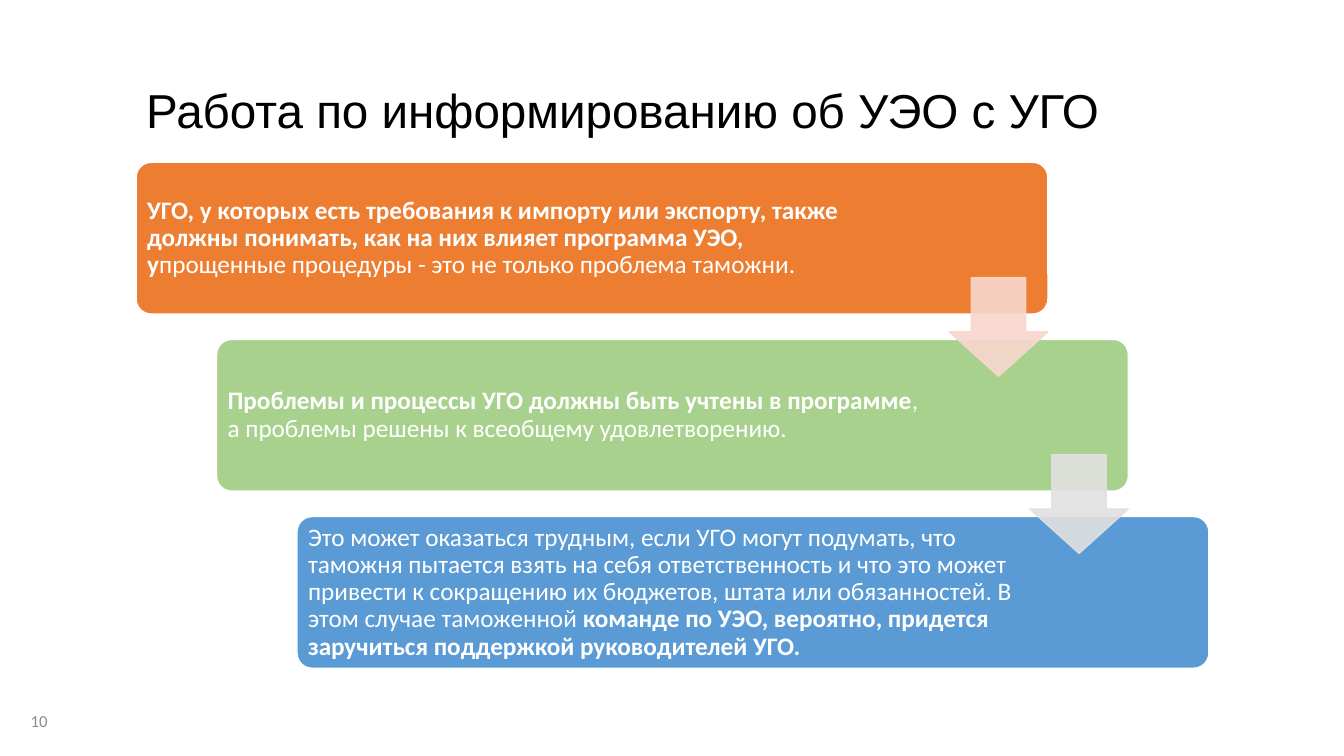
from dataclasses import dataclass

from lxml import etree
from pptx import Presentation
from pptx.dml.color import RGBColor
from pptx.enum.shapes import MSO_SHAPE
from pptx.enum.text import MSO_ANCHOR, PP_ALIGN
from pptx.oxml.ns import qn
from pptx.util import Inches, Pt

ROUND, DOWN = MSO_SHAPE.ROUNDED_RECTANGLE, MSO_SHAPE.DOWN_ARROW
MIDDLE = MSO_ANCHOR.MIDDLE
LEFT, RIGHT = PP_ALIGN.LEFT, PP_ALIGN.RIGHT


@dataclass(frozen=True)
class Theme:
    head: str = "Arial"
    body: str = "Calibri"
    ink: str = "000000"
    white: str = "FFFFFF"
    muted: str = "8C8C8C"
    cards: tuple = ("ED7D31", "A9D18E", "5B9BD5")
    arrows: tuple = ("F8D7CE", "E1E1E1")
    title: int = 34
    text: int = 18
    small: int = 12


THEME = Theme()
WIDE, HIGH = 13.33, 7.5
# Each step: its text runs, with a flag for bold
STEPS = [
    [("УГО, у которых есть требования к импорту или экспорту, также должны "
      "понимать, как на них влияет программа УЭО, у", True),
     ("прощенные процедуры - это не только проблема таможни.", False)],
    [("Проблемы и процессы УГО должны быть учтены в программе", True),
     (", а проблемы решены к всеобщему удовлетворению.", False)],
    [("Это может оказаться трудным, если УГО могут подумать, что таможня "
      "пытается взять на себя ответственность и что это может привести к "
      "сокращению их бюджетов, штата или обязанностей. В этом случае "
      "таможенной ", False),
     ("команде по УЭО, вероятно, придется заручиться поддержкой "
      "руководителей УГО.", True)],
]


def place(box):
    return [Inches(v) for v in box]


def write(frame, runs, face, size, color, align=LEFT, line=None):
    """Fill a frame with one paragraph of styled runs."""
    frame.word_wrap = True
    frame.vertical_anchor = MIDDLE
    para = frame.paragraphs[0]
    para.alignment = align
    para.line_spacing = line
    for text, bold in runs:
        run = para.add_run()
        run.text = text
        font = run.font
        font.name, font.size, font.bold = face, Pt(size), bold
        font.color.rgb = RGBColor.from_string(color)


def draw(slide, kind, box, fill, edge, adjust):
    """Add a flat shape with a thin edge."""
    shape = slide.shapes.add_shape(kind, *place(box))
    shape.shadow.inherit = False
    for i, value in enumerate(adjust):
        shape.adjustments[i] = value
    shape.fill.solid()
    shape.fill.fore_color.rgb = RGBColor.from_string(fill)
    shape.line.color.rgb = RGBColor.from_string(edge)
    shape.line.width = Pt(1)
    return shape


def add_title(slide, box):
    title = slide.shapes.title
    title.left, title.top, title.width, title.height = place(box)
    write(title.text_frame, [("Работа по информированию об УЭО с УГО", False)],
          THEME.head, THEME.title, THEME.ink, line=0.9)


def add_number(slide, box):
    note = slide.shapes.add_textbox(*place(box))
    write(note.text_frame, [("10", False)], THEME.body, THEME.small,
          THEME.muted, RIGHT)


def add_card(slide, box, fill, runs, share):
    """Draw a card whose text takes a share of its width."""
    x, y, w, h = box
    pad = 0.04
    draw(slide, ROUND, box, fill, THEME.white, [0.1])
    label = slide.shapes.add_textbox(
        *place((x + pad, y + pad, w * share, h - 2 * pad)))
    frame = label.text_frame
    frame.margin_left = frame.margin_right = Inches(0.07)
    frame.margin_top = frame.margin_bottom = Inches(0.07)
    write(frame, runs, THEME.body, THEME.text, THEME.white, line=0.9)


def add_arrow(slide, box, fill):
    arrow = draw(slide, DOWN, box, fill, fill, [0.55, 0.45])
    for color in arrow._element.spPr.iter(qn("a:srgbClr")):
        etree.SubElement(color, qn("a:alpha")).set("val", "90000")


def add_stairs(slide, box):
    """Step the cards down and right, with arrows over the gaps."""
    x, y, w, h = box
    shift, drop = w * 0.075, h * 0.35
    wide, tall = w * 0.85, h * 0.3
    side = tall * 0.65
    for i, (fill, runs) in enumerate(zip(THEME.cards, STEPS)):
        spot = (x + i * shift, y + i * drop, wide, tall)
        add_card(slide, spot, fill, runs, 0.82 if i == 0 else 0.79)
    # Arrows lie over all the cards
    for i, fill in enumerate(THEME.arrows):
        spot = (x + i * shift + wide - side,
                y + i * drop + tall * 0.76, side, side)
        add_arrow(slide, spot, fill)


def main():
    deck = Presentation()
    deck.slide_width, deck.slide_height = Inches(WIDE), Inches(HIGH)
    slide = deck.slides.add_slide(deck.slide_layouts[5])
    add_title(slide, (1.35, 0.4, 9.79, 1.45))
    add_number(slide, (0, 6.95, 0.57, 0.4))
    add_stairs(slide, (1.35, 1.61, 10.64, 5.02))
    deck.save("out.pptx")


if __name__ == "__main__":
    main()
